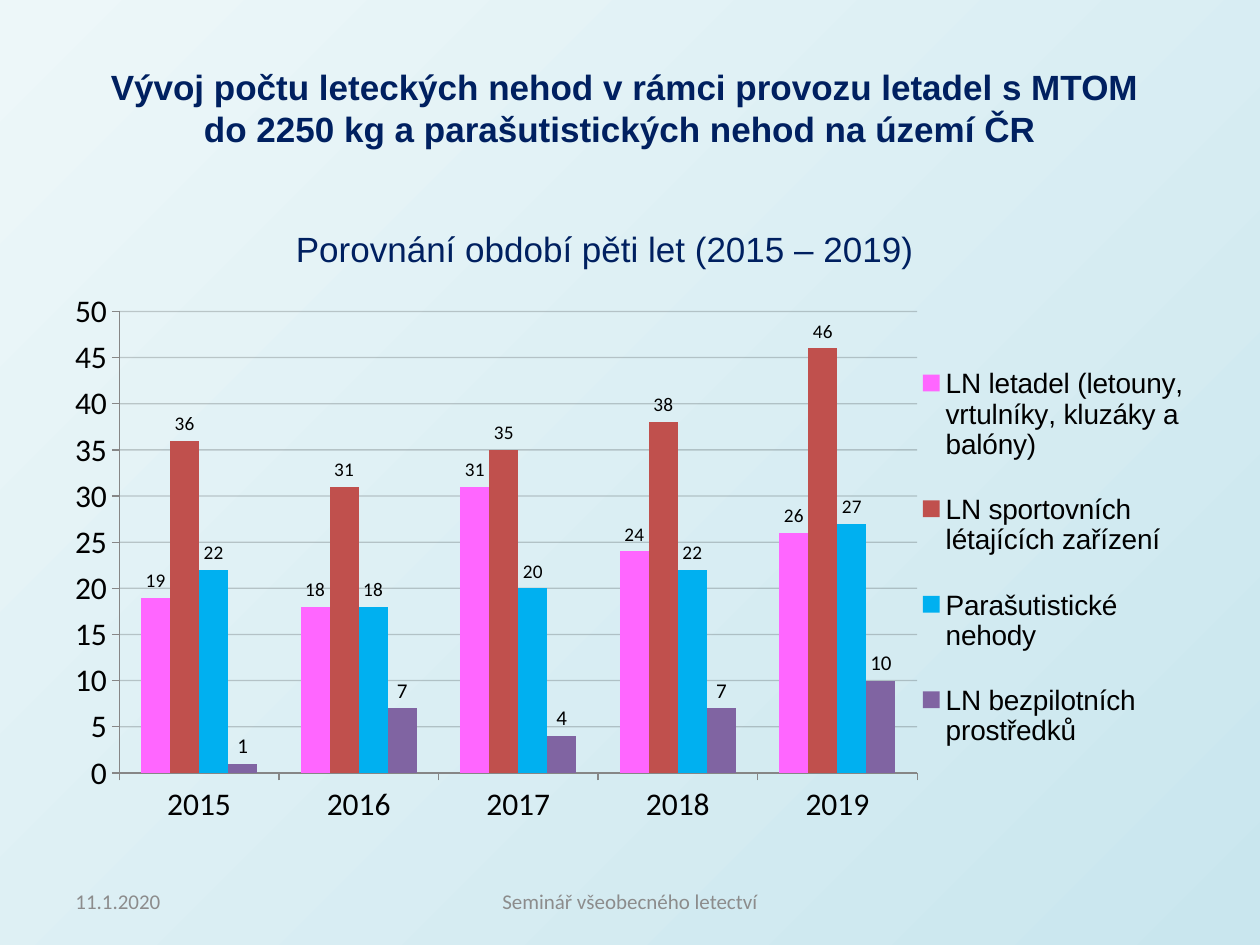
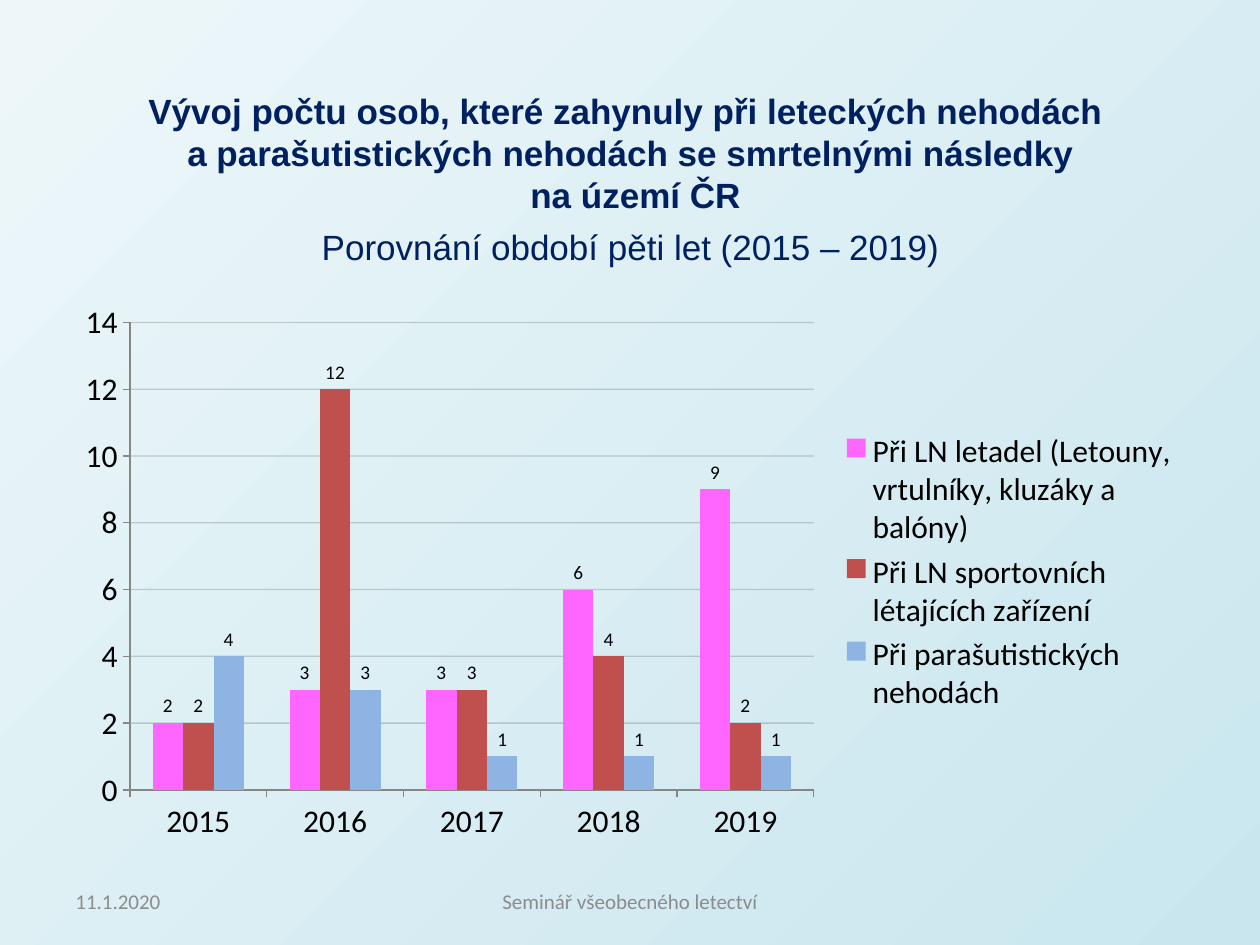
"""Build two slides of column charts on air accidents, 2015 to 2019."""
from lxml.etree import SubElement as Sub
from pptx import Presentation
from pptx.chart.data import CategoryChartData as Data
from pptx.dml.color import RGBColor as Rgb
from pptx.enum.chart import XL_CHART_TYPE as Kind, XL_LABEL_POSITION as Spot
from pptx.enum.chart import XL_LEGEND_POSITION as Side, XL_TICK_MARK as Tick
from pptx.enum.text import MSO_ANCHOR as Anchor, PP_ALIGN as Align
from pptx.oxml.ns import qn
from pptx.util import Pt

NAVY = Rgb(0x00, 0x20, 0x60)
GRAY = Rgb(0x8C, 0x8C, 0x8C)
AXIS = Rgb(0x86, 0x86, 0x86)
BLACK = Rgb(0x00, 0x00, 0x00)
PINK = Rgb(0xFF, 0x66, 0xFF)
RED = Rgb(0xC0, 0x50, 0x4D)
CYAN = Rgb(0x00, 0xB0, 0xF0)
VIOLET = Rgb(0x80, 0x64, 0xA2)
SKY = Rgb(0x8E, 0xB4, 0xE3)
PALE = Rgb(0xED, 0xF7, 0xF9)
DEEP = Rgb(0xC9, 0xE6, 0xEE)

YEARS = ["2015", "2016", "2017", "2018", "2019"]
PERIOD = "Porovnání období pěti let (2015 – 2019)"
FOOT = [
    ("11.1.2020", (36, 500.4, 168, 28.8), Align.LEFT),
    ("Seminář všeobecného letectví", (246, 500.4, 228, 28.8), Align.CENTER),
]
SLIDES = [
    {
        "texts": [
            ((39.6, 33.8, 635, 55.4), True, [(
                ["Vývoj počtu leteckých nehod v rámci provozu letadel s MTOM",
                 "do 2250 kg a parašutistických nehod na území ČR "], True)]),
            ((160.6, 126.7, 370, 31.7), False, [([PERIOD], False)]),
        ],
        "chart": (31, 162, 652.3, 319.7),
        "top": 50, "step": 5, "grid": 19,
        "key": ("Arial", 16),
        "plot": (0.057, 0.05, 0.699, 0.825),
        "keybox": (0.755, 0.09, 0.24, 0.8),
        "series": [
            ("LN letadel (letouny, vrtulníky, kluzáky a balóny)",
             (19, 18, 31, 24, 26), PINK, 11),
            ("LN sportovních létajících zařízení",
             (36, 31, 35, 38, 46), RED, 11),
            ("Parašutistické nehody", (22, 18, 20, 22, 27), CYAN, 11),
            ("LN bezpilotních prostředků", (1, 7, 4, 7, 10), VIOLET, 12),
        ],
    },
    {
        "texts": [
            ((59.8, 47.5, 601.2, 110.2), True, [
                (["Vývoj počtu osob, které zahynuly při leteckých nehodách ",
                  "a parašutistických nehodách se smrtelnými následky",
                  " na území ČR"], True),
                ([PERIOD], False)]),
        ],
        "chart": (36, 167, 645, 319.7),
        "top": 14, "step": 2, "grid": 17,
        "key": ("Calibri", 18),
        "series": [
            ("Při LN letadel (Letouny, vrtulníky, kluzáky a balóny)",
             (2, 3, 3, 6, 9), PINK, 11),
            ("Při LN sportovních létajících zařízení",
             (2, 12, 3, 4, 2), RED, 11),
            ("Při parašutistických nehodách", (4, 3, 1, 1, 1), SKY, 11),
        ],
    },
]


def style(font, name, size, color, bold=False):
    font.name, font.size, font.bold = name, Pt(size), bold
    font.color.rgb = color


def write(slide, box, paras, name, size, color, align=Align.CENTER, wrap=True):
    frame = slide.shapes.add_textbox(*map(Pt, box)).text_frame
    frame.word_wrap = wrap
    for i, (lines, bold) in enumerate(paras):
        para = frame.add_paragraph() if i else frame.paragraphs[0]
        para.alignment = align
        if i:
            para.space_before = Pt(6)
        for j, line in enumerate(lines):
            if j:
                para.add_line_break()
            run = para.add_run()
            run.text = line
            style(run.font, name, size, color, bold)
    return frame


def place(node, at, box, inner=False):
    for old in node.findall(qn("c:layout")):
        node.remove(old)
    lay = node.makeelement(qn("c:layout"))
    node.insert(at, lay)
    man = Sub(lay, qn("c:manualLayout"))
    parts = [("layoutTarget", "inner")] if inner else []
    parts += [("xMode", "edge"), ("yMode", "edge"), *zip("xywh", box)]
    for tag, val in parts:
        Sub(man, qn("c:" + tag)).set("val", str(val))


def draw(slide, item):
    data = Data()
    data.categories = YEARS
    for name, vals, *_ in item["series"]:
        data.add_series(name, vals)
    box = map(Pt, item["chart"])
    chart = slide.shapes.add_chart(Kind.COLUMN_CLUSTERED, *box, data).chart
    style(chart.font, "Calibri", 18, BLACK)
    chart.has_title = False
    chart.has_legend = True
    key = chart.legend
    key.position, key.include_in_layout = Side.RIGHT, False
    style(key.font, *item["key"], BLACK)

    plot = chart.plots[0]
    plot.gap_width, plot.overlap, plot.vary_by_categories = 150, 0, False
    for ser, (_, _, color, size) in zip(plot.series, item["series"]):
        ser.format.fill.solid()
        ser.format.fill.fore_color.rgb = color
        ser.invert_if_negative = False
        tags = ser.data_labels
        tags.show_value, tags.position = True, Spot.OUTSIDE_END
        style(tags.font, "Calibri", size, BLACK)

    rise = chart.value_axis
    for axis in (chart.category_axis, rise):
        axis.major_tick_mark, axis.minor_tick_mark = Tick.OUTSIDE, Tick.NONE
        axis.format.line.color.rgb = AXIS
        axis.format.line.width = Pt(0.75)
    rise.minimum_scale, rise.maximum_scale = 0, item["top"]
    rise.major_unit = item["step"]
    rise.has_major_gridlines = True
    grid = rise.major_gridlines.format.line
    grid.width = Pt(0.75)
    grid.color.rgb = BLACK
    root = chart.element
    tint = root.find(".//" + qn("c:majorGridlines")).find(".//" + qn("a:srgbClr"))
    Sub(tint, qn("a:alpha")).set("val", str(item["grid"] * 1000))
    if "plot" in item:
        place(root.find(".//" + qn("c:plotArea")), 0, item["plot"], True)
        place(root.find(".//" + qn("c:legend")), 1, item["keybox"])


def main():
    deck = Presentation()
    deck.slide_width, deck.slide_height = Pt(720), Pt(540)
    for item in SLIDES:
        slide = deck.slides.add_slide(deck.slide_layouts[6])
        fill = slide.background.fill
        fill.gradient()
        fill.gradient_angle = 315
        for stop, color in zip(fill.gradient_stops, (PALE, DEEP)):
            stop.color.rgb = color
        draw(slide, item)
        for box, wrap, paras in item["texts"]:
            write(slide, box, paras, "Arial", 20, NAVY, wrap=wrap)
        for text, box, align in FOOT:
            foot = write(slide, box, [([text], False)], "Calibri", 12, GRAY, align)
            foot.vertical_anchor = Anchor.MIDDLE
    deck.save("out.pptx")


if __name__ == "__main__":
    main()
